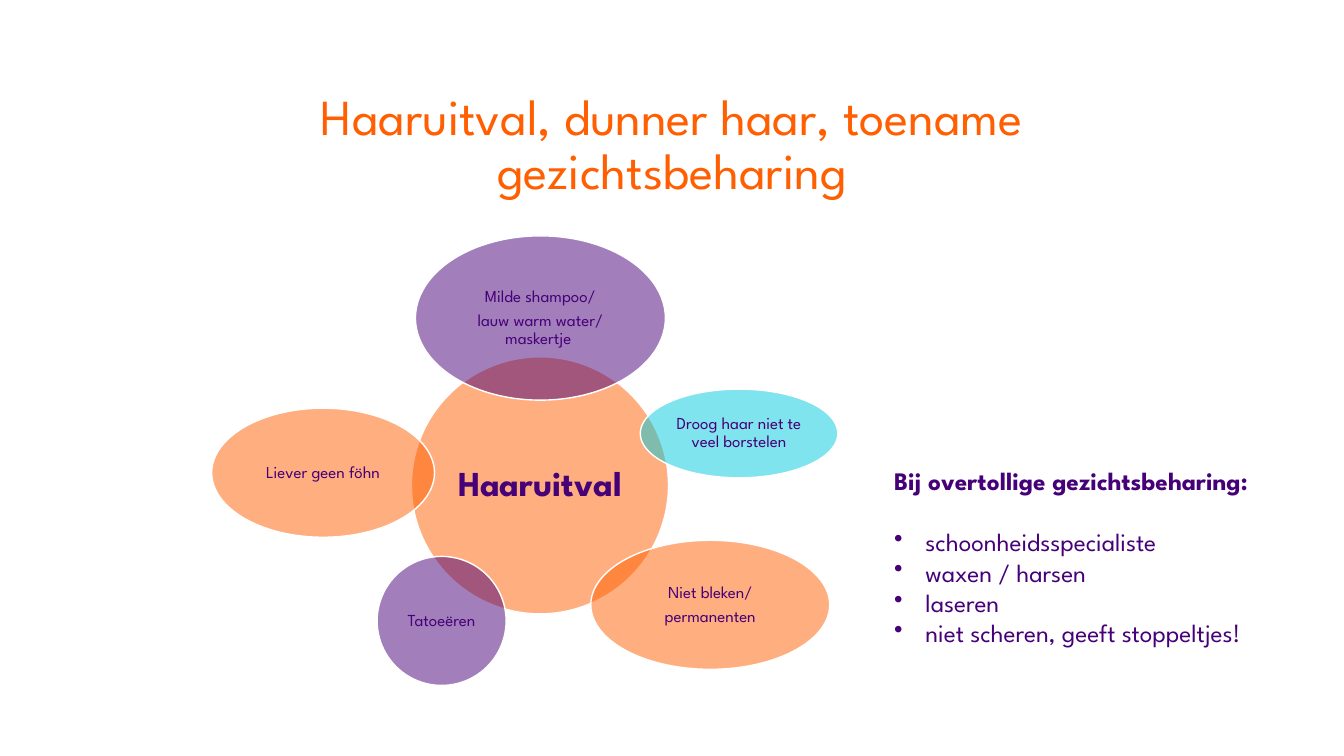
import pptx
import pptx.dml.color
import pptx.enum.shapes
import pptx.enum.text
import pptx.oxml.ns
import pptx.util
from lxml import etree

ORANGE = pptx.dml.color.RGBColor(0xFF, 0x5F, 0x00)
PURPLE = pptx.dml.color.RGBColor(0x46, 0x00, 0x78)
CYAN = pptx.dml.color.RGBColor(0x00, 0xCB, 0xDE)
WHITE = pptx.dml.color.RGBColor(0xFF, 0xFF, 0xFF)

FONT = "League Spartan"
SLIDE_WIDTH = pptx.util.Inches(13.33)
SLIDE_HEIGHT = pptx.util.Inches(7.5)
CENTER = pptx.enum.text.PP_ALIGN.CENTER
LEFT = pptx.enum.text.PP_ALIGN.LEFT

HUB = (30.61, 47.2, 19.13, 34)
PETALS = [
    ((30.91, 31.2, 18.6, 21.73), PURPLE, ["Milde shampoo/", "lauw warm water/ maskertje "]),
    ((47.64, 51.47, 14.7, 11.73), CYAN, ["Droog haar niet te veel borstelen"]),
    ((43.96, 71.47, 17.78, 17.07), ORANGE, ["Niet bleken/", "permanenten"]),
    ((28.06, 73.6, 9.6, 17.07), PURPLE, ["Tatoeëren"]),
    ((15.75, 54, 16.58, 17.07), ORANGE, ["Liever geen föhn"]),
]
ADVICE = ["schoonheidsspecialiste", "waxen / harsen", "laseren", "niet scheren, geeft stoppeltjes!"]


def across(percent):
    return round(SLIDE_WIDTH * percent / 100)


def down(percent):
    return round(SLIDE_HEIGHT * percent / 100)


def place(area):
    left, top, width, height = area
    return across(left), down(top), across(width), down(height)


def add_bullet(para, indent):
    properties = para._p.get_or_add_pPr()
    properties.set("marL", str(indent))
    properties.set("indent", str(-indent))
    bullet = etree.SubElement(properties, pptx.oxml.ns.qn("a:buChar"))
    bullet.set("char", "•")


def write(frame, text, *, size, color=PURPLE, bold=False, align=LEFT,
          spacing=1.0, before=0, after=0, bullet=False):
    para = frame.paragraphs[-1]
    if para.runs:
        para = frame.add_paragraph()
    para.alignment = align
    para.line_spacing = spacing
    para.space_before = pptx.util.Pt(before)
    para.space_after = pptx.util.Pt(after)
    if bullet:
        add_bullet(para, across(2.33))
    span = para.add_run()
    span.text = text
    span.font.name = FONT
    span.font.size = pptx.util.Pt(size)
    span.font.bold = bold
    span.font.color.rgb = color


def add_text_box(page, area):
    frame = page.shapes.add_textbox(*place(area)).text_frame
    frame.word_wrap = True
    return frame


def add_ellipse(page, area, color, lines, size=12, bold=False, inset=0.02):
    ellipse = page.shapes.add_shape(pptx.enum.shapes.MSO_SHAPE.OVAL, *place(area))
    ellipse.shadow.inherit = False
    ellipse.fill.solid()
    ellipse.fill.fore_color.rgb = color
    fill_color = ellipse.fill._xPr.find(".//" + pptx.oxml.ns.qn("a:srgbClr"))
    etree.SubElement(fill_color, pptx.oxml.ns.qn("a:alpha")).set("val", "50000")
    ellipse.line.color.rgb = WHITE
    ellipse.line.width = pptx.util.Pt(1)
    frame = ellipse.text_frame
    frame.word_wrap = True
    frame.vertical_anchor = pptx.enum.text.MSO_ANCHOR.MIDDLE
    margin = pptx.util.Inches(inset)
    frame.margin_left = frame.margin_right = margin
    frame.margin_top = frame.margin_bottom = margin
    for line in lines:
        write(frame, line, size=size, bold=bold, align=CENTER, spacing=0.9, after=size * 0.35)


def add_title(page):
    frame = add_text_box(page, (10.28, 11.47, 79.44, 6.53))
    write(frame, "Haaruitval, dunner haar, toename gezichtsbeharing",
          size=36, color=ORANGE, align=CENTER, spacing=0.9)


def add_flower(page):
    add_ellipse(page, HUB, ORANGE, ["Haaruitval"], size=25, bold=True, inset=0.03)
    for area, color, lines in PETALS:
        add_ellipse(page, area, color, lines)


def add_advice(page):
    frame = add_text_box(page, (65.79, 60.93, 33, 25.6))
    write(frame, "Bij overtollige gezichtsbeharing:", size=18, bold=True)
    for index, item in enumerate(ADVICE):
        write(frame, item, size=18, before=0 if index else 22, bullet=True)


def main():
    deck = pptx.Presentation()
    deck.slide_width = SLIDE_WIDTH
    deck.slide_height = SLIDE_HEIGHT
    page = deck.slides.add_slide(deck.slide_layouts[6])
    add_title(page)
    add_flower(page)
    add_advice(page)
    deck.save("out.pptx")


if __name__ == "__main__":
    main()
